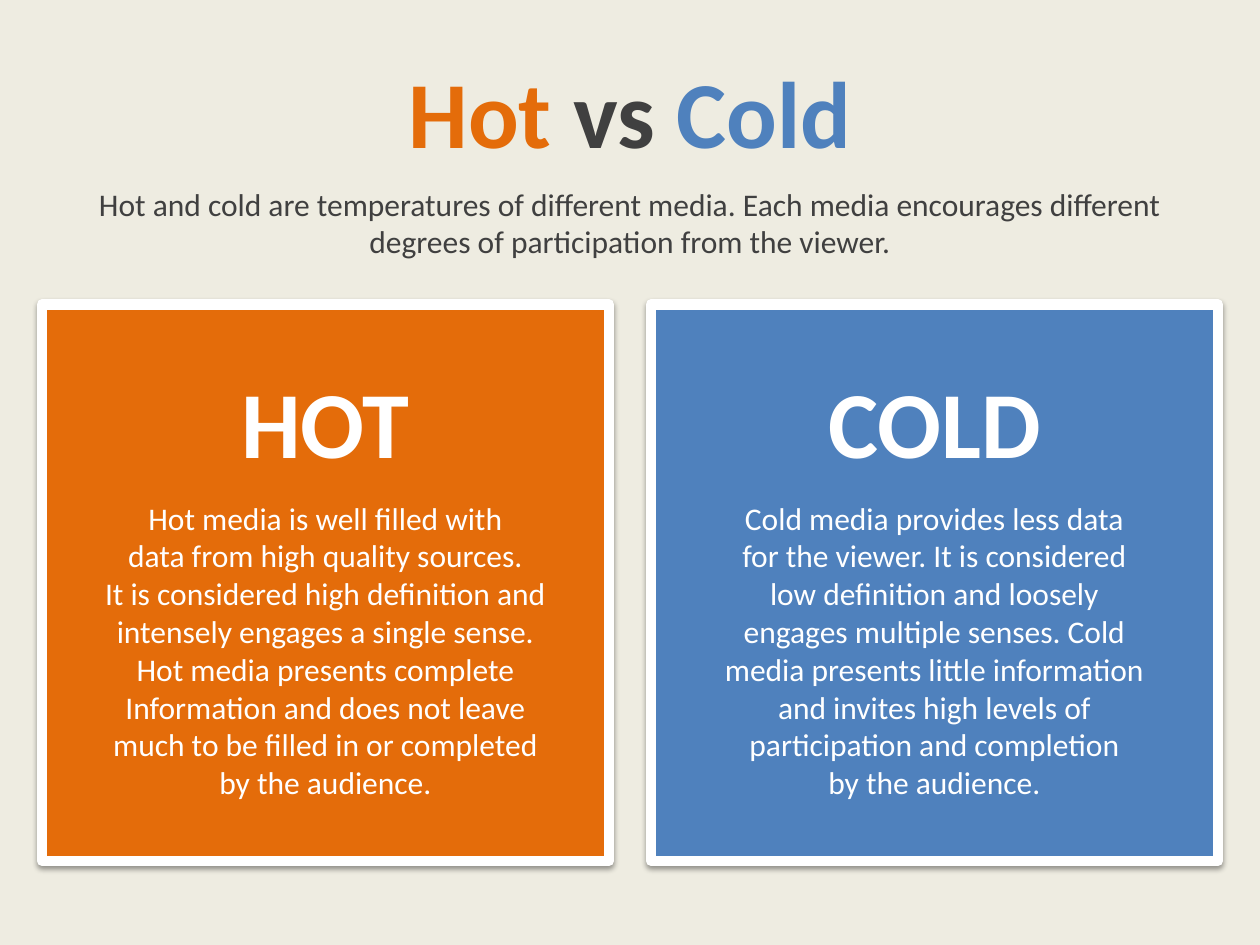
from lxml import etree
from pptx import Presentation
from pptx import util as u
from pptx.dml.color import RGBColor
from pptx.enum import shapes, text
from pptx.oxml.ns import qn

HOT = "E46C0A"
COLD = "4F81BD"
DARK = "404040"
WHITE = "FFFFFF"
CREAM = "EEECE1"

HOT_LINES = [
    "Hot media is well filled with",
    "data from high quality sources.",
    "It is considered high definition and",
    "intensely engages a single sense.",
    "Hot media presents complete",
    "Information and does not leave",
    "much to be filled in or completed",
    "by the audience.",
]
COLD_LINES = [
    "Cold media provides less data",
    "for the viewer. It is considered",
    "low definition and loosely",
    "engages multiple senses. Cold",
    "media presents little information",
    "and invites high levels of",
    "participation and completion",
    "by the audience.",
]


def paint(color_format, color):
    color_format.rgb = RGBColor.from_string(color)


def write(paragraph, content, size=18, color=DARK, bold=False):
    paragraph.alignment = text.PP_ALIGN.CENTER
    run = paragraph.add_run()
    run.text = content
    run.font.name = "Calibri"
    run.font.size = u.Pt(size)
    run.font.bold = bold
    paint(run.font.color, color)


def add_text_box(slide, left, top, width, height, anchor):
    box = slide.shapes.add_textbox(*map(u.Pt, (left, top, width, height)))
    frame = box.text_frame
    frame.word_wrap = True
    frame.vertical_anchor = anchor
    return frame.paragraphs[0]


def add_soft_shadow(shape):
    shape.shadow.inherit = False
    effects = shape._element.spPr.find(qn("a:effectLst"))
    shadow = etree.SubElement(
        effects, qn("a:outerShdw"), blurRad=str(u.Pt(3.1)),
        dist=str(u.Pt(1.6)), dir="5400000", rotWithShape="0")
    color = etree.SubElement(shadow, qn("a:srgbClr"), val="000000")
    etree.SubElement(color, qn("a:alpha"), val="38000")


def add_card(slide, left, heading, lines, color):
    card = slide.shapes.add_shape(
        shapes.MSO_SHAPE.RECTANGLE, *map(u.Pt, (left, 174, 324, 318)))
    card.fill.solid()
    paint(card.fill.fore_color, color)
    paint(card.line.color, WHITE)
    card.line.width = u.Pt(6)
    add_soft_shadow(card)
    frame = card.text_frame
    frame.word_wrap = True
    frame.vertical_anchor = text.MSO_ANCHOR.MIDDLE
    title = frame.paragraphs[0]
    title.space_after = u.Pt(12)
    write(title, heading, size=54, color=WHITE, bold=True)
    for line in lines:
        write(frame.add_paragraph(), line, color=WHITE)


def main():
    presentation = Presentation()
    presentation.slide_width = u.Pt(720)
    presentation.slide_height = u.Pt(540)
    slide = presentation.slides.add_slide(presentation.slide_layouts[6])
    slide.background.fill.solid()
    paint(slide.background.fill.fore_color, CREAM)

    title = add_text_box(slide, 0, 18, 720, 90, text.MSO_ANCHOR.MIDDLE)
    for word, color in (("Hot ", HOT), ("vs ", DARK), ("Cold", COLD)):
        write(title, word, size=54, color=color, bold=True)

    add_card(slide, 24, "HOT", HOT_LINES, HOT)
    add_card(slide, 372, "COLD", COLD_LINES, COLD)

    summary = add_text_box(slide, 24, 102, 672, 51, text.MSO_ANCHOR.TOP)
    write(summary, "Hot and cold are temperatures of different media. "
                   "Each media encourages different degrees of "
                   "participation from the viewer.")
    presentation.save("out.pptx")


if __name__ == "__main__":
    main()
